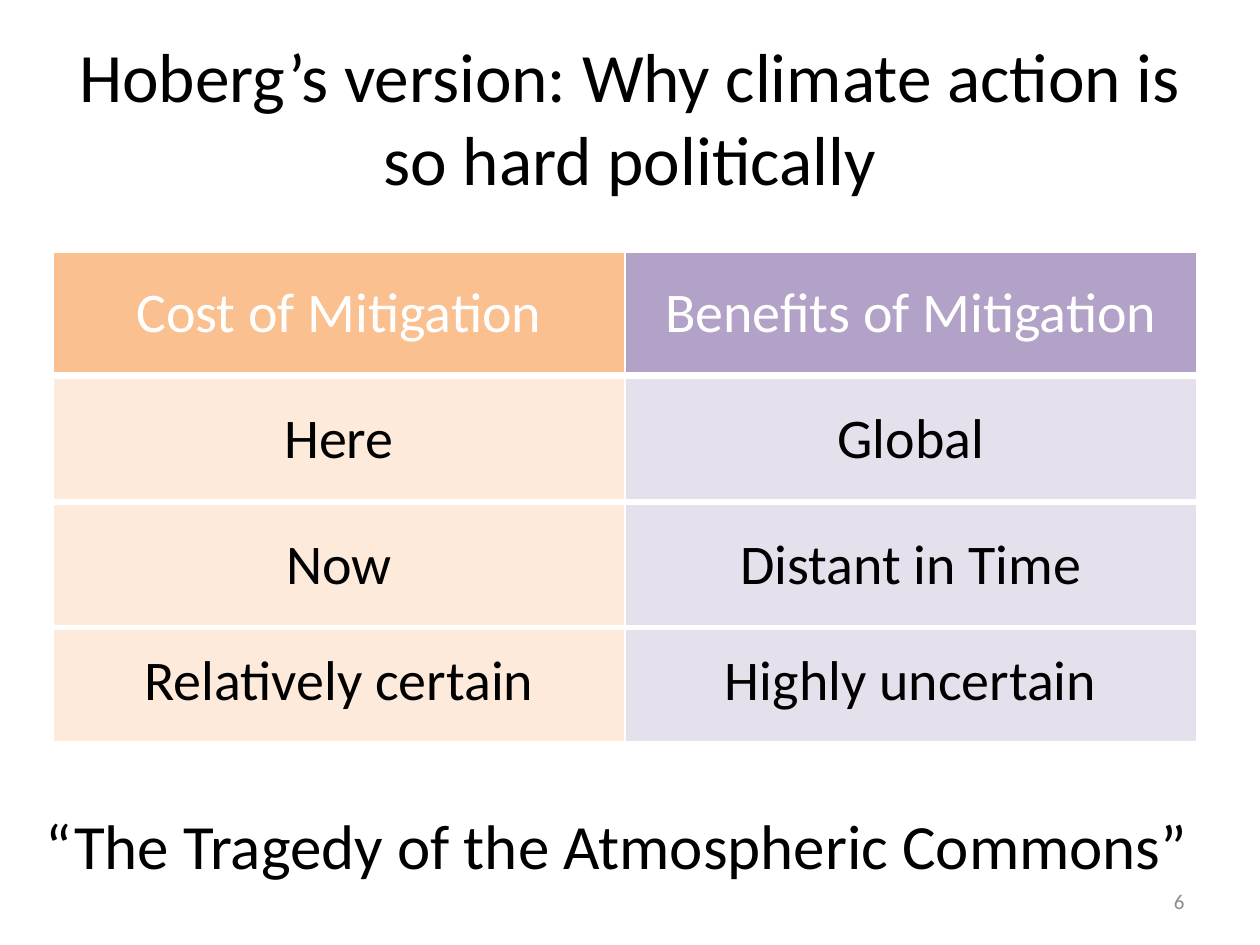
from dataclasses import dataclass

from lxml.etree import SubElement
from pptx import Presentation
from pptx.dml.color import RGBColor
from pptx.enum.text import MSO_ANCHOR, PP_ALIGN
from pptx.oxml.ns import qn
from pptx.util import Inches, Pt


@dataclass(frozen=True)
class Theme:
    font: str = "Calibri"
    title: float = 39.6
    closing: float = 36
    table: float = 32
    number: float = 12
    black: str = "000000"
    white: str = "FFFFFF"
    grey: str = "8C8C8C"
    header_fills: tuple[str, str] = ("FAC090", "B3A2C7")
    body_fills: tuple[str, str] = ("FDEADA", "E6E0EC")


@dataclass(frozen=True)
class Label:
    text: str
    left: float
    top: float
    width: float
    height: float
    size: float
    color: str
    align: PP_ALIGN = PP_ALIGN.LEFT
    anchor: MSO_ANCHOR = MSO_ANCHOR.MIDDLE


@dataclass(frozen=True)
class Comparison:
    """One row of cost against benefit, held in a table of its own."""
    cost: str
    benefit: str
    top: float
    height: float = 0.98
    color: str = "000000"
    fills: tuple[str, str] = ("FDEADA", "E6E0EC")


THEME = Theme()
TABLE_LEFT, COLUMN_WIDTH = 0.42, 4.54
BORDERS = {"a:lnL": 1, "a:lnR": 1, "a:lnT": 1, "a:lnB": 3}

LABELS = [
    Label("Hoberg’s version: Why climate action is so hard politically",
          0.5, 0.3, 9, 1.25, THEME.title, THEME.black, PP_ALIGN.CENTER),
    Label("6", 7.17, 6.95, 2.33, 0.4, THEME.number, THEME.grey, PP_ALIGN.RIGHT),
    Label("“The Tragedy of the Atmospheric Commons”",
          0.26, 6.35, 9.44, 0.71, THEME.closing, THEME.black, anchor=MSO_ANCHOR.TOP),
]

# Later rows lie over the lower edge of earlier ones, so they go from back to front.
COMPARISONS = [
    Comparison("Cost of Mitigation", "Benefits of Mitigation", 2, 0.97,
               THEME.white, THEME.header_fills),
    Comparison("Relatively certain", "Highly uncertain", 4.92),
    Comparison("Now", "Distant in Time", 4),
    Comparison("Here", "Global", 3),
]


def add_run(p, text: str, size: float, color: str, align: PP_ALIGN) -> None:
    p.alignment = align
    r = p.add_run()
    r.text = text
    r.font.name = THEME.font
    r.font.size = Pt(size)
    r.font.color.rgb = RGBColor.from_string(color)


def add_label(s, label: Label) -> None:
    sp = s.shapes.add_textbox(Inches(label.left), Inches(label.top),
                              Inches(label.width), Inches(label.height))
    tf = sp.text_frame
    tf.word_wrap = True
    tf.vertical_anchor = label.anchor
    add_run(tf.paragraphs[0], label.text, label.size, label.color, label.align)


def set_borders(cell) -> None:
    """Draw white edges; they must come before the fill in the cell's XML."""
    tc_pr = cell._tc.get_or_add_tcPr()
    for tag, width in BORDERS.items():
        ln = SubElement(tc_pr, qn(tag), w=str(Pt(width)))
        fill = SubElement(ln, qn("a:solidFill"))
        SubElement(fill, qn("a:srgbClr"), val=THEME.white)


def add_comparison(s, row: Comparison) -> None:
    table = s.shapes.add_table(1, 2, Inches(TABLE_LEFT), Inches(row.top),
                               Inches(2 * COLUMN_WIDTH), Inches(row.height)).table
    for cell, text, fill in zip(table.rows[0].cells, (row.cost, row.benefit), row.fills):
        set_borders(cell)
        cell.fill.solid()
        cell.fill.fore_color.rgb = RGBColor.from_string(fill)
        cell.vertical_anchor = MSO_ANCHOR.MIDDLE
        add_run(cell.text_frame.paragraphs[0], text, THEME.table, row.color,
                PP_ALIGN.CENTER)


def main() -> None:
    prs = Presentation()
    prs.slide_width, prs.slide_height = Inches(10), Inches(7.5)
    s = prs.slides.add_slide(prs.slide_layouts[6])
    title, number, closing = LABELS
    add_label(s, title)
    add_label(s, number)
    for row in COMPARISONS:
        add_comparison(s, row)
    add_label(s, closing)
    prs.save("out.pptx")


if __name__ == "__main__":
    main()
